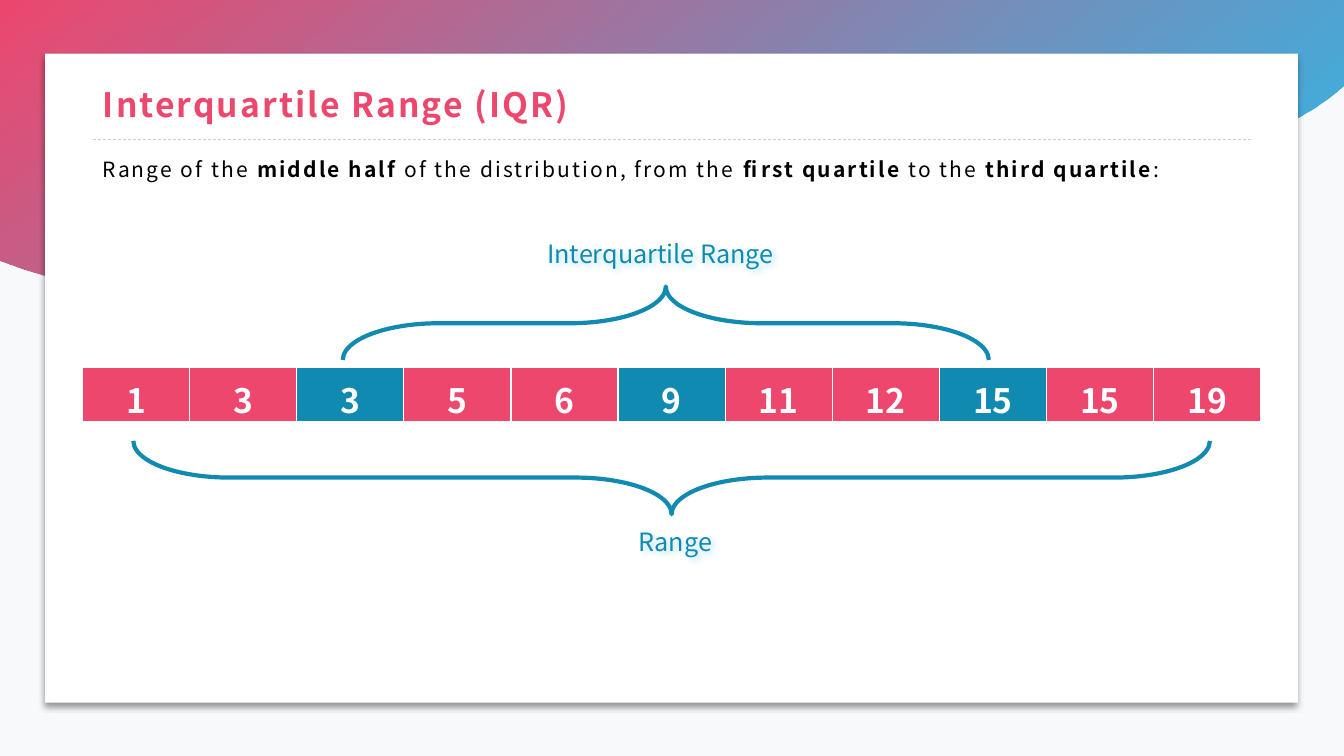
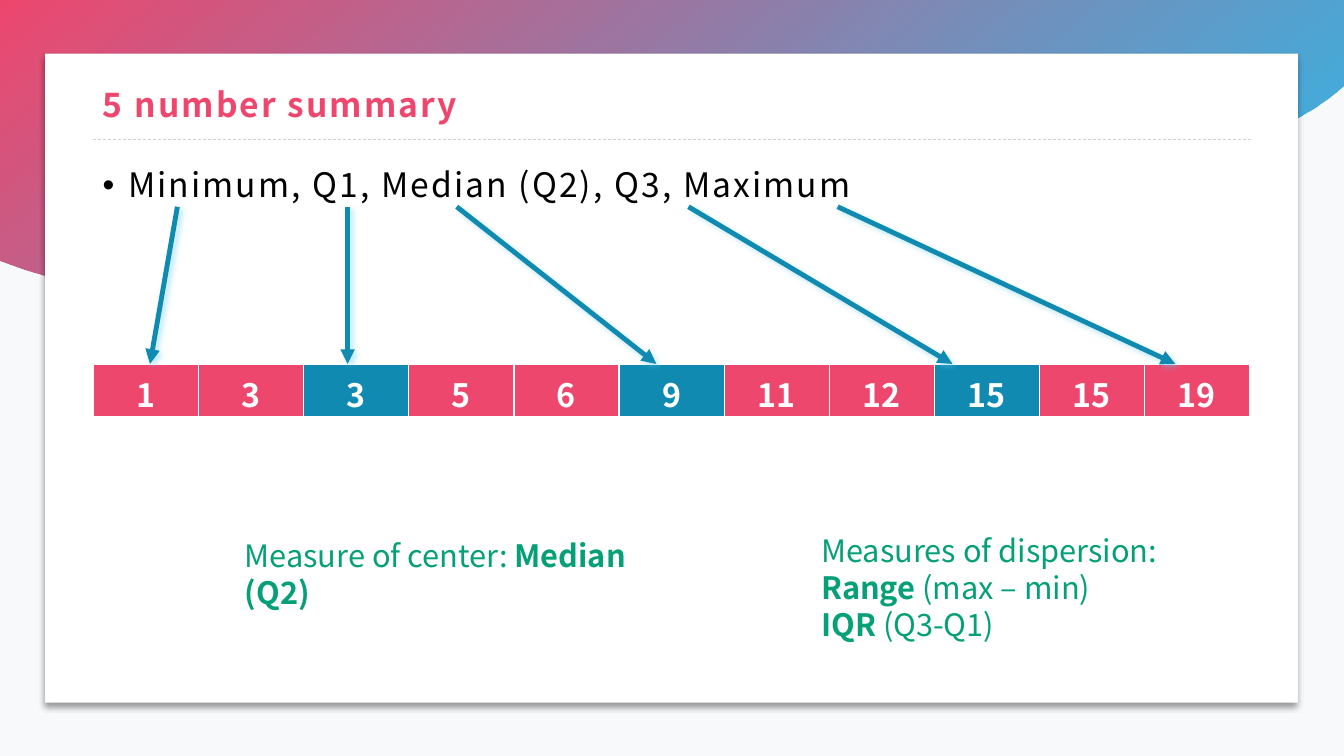
from dataclasses import dataclass

from lxml.etree import SubElement
from pptx import Presentation
from pptx.dml.color import RGBColor
from pptx.enum.dml import MSO_LINE
from pptx.enum.shapes import MSO_CONNECTOR, MSO_SHAPE
from pptx.enum.text import MSO_ANCHOR, MSO_AUTO_SIZE, PP_ALIGN
from pptx.oxml.ns import qn
from pptx.util import Cm, Pt


@dataclass(frozen=True)
class Theme:
    font: str = "Noto Sans CJK JP"
    pink: str = "EE476E"
    sky: str = "16B3E8"
    blue: str = "118AB1"
    glow: str = "52C8EE"
    green: str = "05A077"
    black: str = "000000"
    white: str = "FFFFFF"
    rule: str = "D0CECE"
    backdrop: str = "F8F9FB"
    title_size: float = 24
    lead_size: float = 15
    label_size: float = 18
    note_size: float = 22
    letter_spacing: float = 1.5


THEME = Theme()
NUMBERS = [1, 3, 3, 5, 6, 9, 11, 12, 15, 15, 19]
QUARTILE_COLUMNS = {2, 5, 8}
WAVE_START = (0, 6.55)
WAVE_CURVES = [
    ((3.1, 7.72), (6.76, 7.9), (9.98, 6.96)),
    ((13.46, 5.97), (16.46, 3.84), (20.12, 3.45)),
    ((23.77, 3.07), (27.64, 4.57), (31.17, 3.61)),
    ((32.18, 3.33), (33.1, 2.82), (33.87, 2.16)),
]


def rgb(color):
    return RGBColor.from_string(color)


def curve_points(start, curves, steps=16):
    """Sample a chain of cubic Bezier curves."""
    points = [start]
    for first, second, end in curves:
        for step in range(1, steps + 1):
            t = step / steps
            weights = ((1 - t) ** 3, 3 * t * (1 - t) ** 2, 3 * t * t * (1 - t), t ** 3)
            corners = (start, first, second, end)
            points.append(tuple(
                sum(w * corner[axis] for w, corner in zip(weights, corners))
                for axis in (0, 1)))
        start = end
    return points


def set_shadow(shape, color=None, angle=0):
    """Replace the inherited shadow by a soft one, or by none without a color."""
    properties = shape._element.spPr
    effects = properties.find(qn("a:effectLst"))
    if effects is None:
        effects = SubElement(properties, qn("a:effectLst"))
    if color:
        shadow = SubElement(effects, qn("a:outerShdw"), blurRad=str(Pt(4)),
                            dist=str(Pt(3)), dir=str(angle * 60000),
                            algn="ctr", rotWithShape="0")
        tint = SubElement(shadow, qn("a:srgbClr"), val=color)
        SubElement(tint, qn("a:alpha"), val="40000")


class Deck:
    def __init__(self, theme):
        self.theme = theme
        self.deck = Presentation()
        self.deck.slide_width, self.deck.slide_height = Cm(33.87), Cm(19.05)
        fill = self.deck.slide_master.background.fill
        fill.solid()
        fill.fore_color.rgb = rgb(theme.backdrop)
        self.page = None

    def add_page(self, title):
        self.page = self.deck.slides.add_slide(self.deck.slide_layouts[5])
        self.add_wave()
        self.add_card()
        self.add_line((2.34, 3.51), (31.57, 3.51), self.theme.rule, 0.5).line.dash_style = MSO_LINE.DASH
        self.add_title(title)

    def add_wave(self):
        points = [(0, 0)] + curve_points(WAVE_START, WAVE_CURVES) + [(33.87, 0)]
        outline = self.page.shapes.build_freeform(0, 0)
        outline.add_line_segments([(Cm(x), Cm(y)) for x, y in points[1:]], close=True)
        wave = outline.convert_to_shape()
        wave.shadow.inherit = False
        wave.line.fill.background()
        wave.fill.gradient()
        wave.fill.gradient_angle = 310
        for stop, color, position in zip(wave.fill.gradient_stops,
                                         (self.theme.pink, self.theme.sky), (0, 1)):
            stop.color.rgb = rgb(color)
            stop.position = position
        last_color = wave._element.spPr.findall(".//" + qn("a:srgbClr"))[-1]
        SubElement(last_color, qn("a:alpha"), val="90000")

    def add_card(self):
        card = self.page.shapes.add_shape(MSO_SHAPE.RECTANGLE, Cm(1.14), Cm(1.35),
                                          Cm(31.57), Cm(16.36))
        card.fill.solid()
        card.fill.fore_color.rgb = rgb(self.theme.white)
        card.line.fill.background()
        set_shadow(card, self.theme.black, 90)

    def add_title(self, text):
        title = self.page.shapes.title
        title.left, title.top, title.width, title.height = Cm(2.34), Cm(1.88), Cm(29.21), Cm(1.63)
        self.page.shapes._spTree.append(title._element)  # in front of the card
        frame = title.text_frame
        frame.auto_size = MSO_AUTO_SIZE.NONE
        frame.vertical_anchor = MSO_ANCHOR.MIDDLE
        para = frame.paragraphs[0]
        para.alignment = PP_ALIGN.LEFT
        para.line_spacing = 0.9
        self.add_span(para, text, self.theme.title_size, self.theme.pink, True,
                      self.theme.letter_spacing)

    def add_span(self, para, text, size, color, bold=False, spacing=0):
        span = para.add_run()
        span.text = text
        span.font.name = self.theme.font
        span.font.size = Pt(size)
        span.font.bold = bold
        span.font.color.rgb = rgb(color)
        if spacing:
            span._r.get_or_add_rPr().set("spc", str(round(spacing * 100)))

    def add_text(self, left, top, width, height, spans, size, color, spacing=0):
        """Add a text box from (text, bold) spans; None breaks the line."""
        box = self.page.shapes.add_textbox(Cm(left), Cm(top), Cm(width), Cm(height))
        box.text_frame.word_wrap = True
        para = box.text_frame.paragraphs[0]
        for span in spans:
            if span is None:
                para.add_line_break()
            else:
                text, bold = span
                self.add_span(para, text, size, color, bold, spacing)
        return box

    def add_body(self, spans, size, bullet=False):
        box = self.add_text(2.34, 3.51, 29.24, 13.64, spans, size, self.theme.black,
                            self.theme.letter_spacing)
        para = box.text_frame.paragraphs[0]
        para.line_spacing = 1.5
        para.space_before = Pt(15)
        if bullet:
            properties = para._p.get_or_add_pPr()
            indent = Cm(0.64)
            properties.set("marL", str(indent))
            properties.set("indent", str(-indent))
            SubElement(properties, qn("a:buFont"), typeface="Arial")
            SubElement(properties, qn("a:buChar"), char="•")

    def add_label(self, left, top, width, text):
        box = self.add_text(left, top, width, 1.02, [(text, False)],
                            self.theme.label_size, self.theme.blue)
        set_shadow(box, self.theme.glow, 45)

    def add_note(self, left, top, width, height, spans):
        self.add_text(left, top, width, height, spans, self.theme.note_size, self.theme.green)

    def add_number_row(self, left, top, width, height, size, padding):
        frame = self.page.shapes.add_table(1, len(NUMBERS), Cm(left), Cm(top),
                                           Cm(width), Cm(height))
        table = frame.table
        table.first_row = table.horz_banding = False
        for index, number in enumerate(NUMBERS):
            table.columns[index].width = Cm(width / len(NUMBERS))
            cell = table.cell(0, index)
            cell.margin_left = cell.margin_right = Cm(0.33)
            cell.margin_top = cell.margin_bottom = Cm(padding)
            cell.fill.solid()
            cell.fill.fore_color.rgb = rgb(
                self.theme.blue if index in QUARTILE_COLUMNS else self.theme.pink)
            para = cell.text_frame.paragraphs[0]
            para.alignment = PP_ALIGN.CENTER
            self.add_span(para, str(number), size, self.theme.white, True)
            self.add_cell_borders(cell)

    def add_cell_borders(self, cell):
        properties = cell._tc.get_or_add_tcPr()
        sides = (("a:lnL", 1), ("a:lnR", 1), ("a:lnT", 1), ("a:lnB", 3))
        for order, (side, weight) in enumerate(sides):
            border = SubElement(properties, qn(side), w=str(Pt(weight)))
            SubElement(SubElement(border, qn("a:solidFill")), qn("a:srgbClr"),
                       val=self.theme.white)
            properties.insert(order, border)

    def add_brace(self, left, top, span, rotation):
        """Add a lying brace whose visible box starts at left, top."""
        depth = 1.85
        shift = (span - depth) / 2
        brace = self.page.shapes.add_shape(MSO_SHAPE.RIGHT_BRACE, Cm(left + shift),
                                           Cm(top - shift), Cm(depth), Cm(span))
        brace.rotation = rotation
        brace.adjustments[0] = 1.309
        brace.adjustments[1] = 0.5
        brace.fill.background()
        brace.line.color.rgb = rgb(self.theme.blue)
        brace.line.width = Pt(3)
        brace.shadow.inherit = False

    def add_line(self, start, end, color, weight, glow=None):
        line = self.page.shapes.add_connector(MSO_CONNECTOR.STRAIGHT,
                                              *(Cm(value) for value in start + end))
        line.line.color.rgb = rgb(color)
        line.line.width = Pt(weight)
        set_shadow(line, glow, 45)
        return line

    def add_arrow(self, start, end):
        arrow = self.add_line(start, end, self.theme.blue, 3.5, self.theme.glow)
        SubElement(arrow.line._get_or_add_ln(), qn("a:tailEnd"), type="triangle")


def add_range_page(deck):
    deck.add_page("Interquartile Range (IQR)")
    deck.add_body([
        ("Range of the ", False), ("middle half", True),
        (" of the distribution, from the", False), (" first quartile", True),
        (" to the ", False), ("third quartile", True), (":", False),
    ], THEME.lead_size)
    deck.add_number_row(2.08, 9.27, 29.69, 1.37, 24, 0.18)
    deck.add_brace(8.64, 7.22, 16.28, 270)
    deck.add_brace(3.36, 11.11, 27.13, 90)
    deck.add_label(15.85, 13.13, 2.62, "Range")
    deck.add_label(13.54, 5.87, 6.78, "Interquartile Range")


def add_summary_page(deck):
    deck.add_page("5 number summary")
    deck.add_body([("Minimum, Q1, Median (Q2), Q3, Maximum", False)],
                  THEME.title_size, bullet=True)
    deck.add_number_row(2.36, 9.17, 29.13, 1.35, 23, 0.16)
    for word_x, number_x in ((4.47, 3.78), (8.76, 8.76), (11.51, 16.54),
                             (17.35, 24), (21.11, 29.62)):
        deck.add_arrow((word_x, 5.21), (number_x, 9.17))
    deck.add_note(5.92, 13.41, 10.74, 2.13,
                  [("Measure of center: ", False), ("Median (Q2)", True)])
    deck.add_note(20.45, 13.28, 10.26, 3.07, [
        ("Measures of dispersion: ", False), ("Range ", True), ("(max – min)", False),
        None, ("IQR", True), (" (Q3-Q1)", False),
    ])


def main():
    deck = Deck(THEME)
    add_range_page(deck)
    add_summary_page(deck)
    deck.deck.save("out.pptx")


if __name__ == "__main__":
    main()
